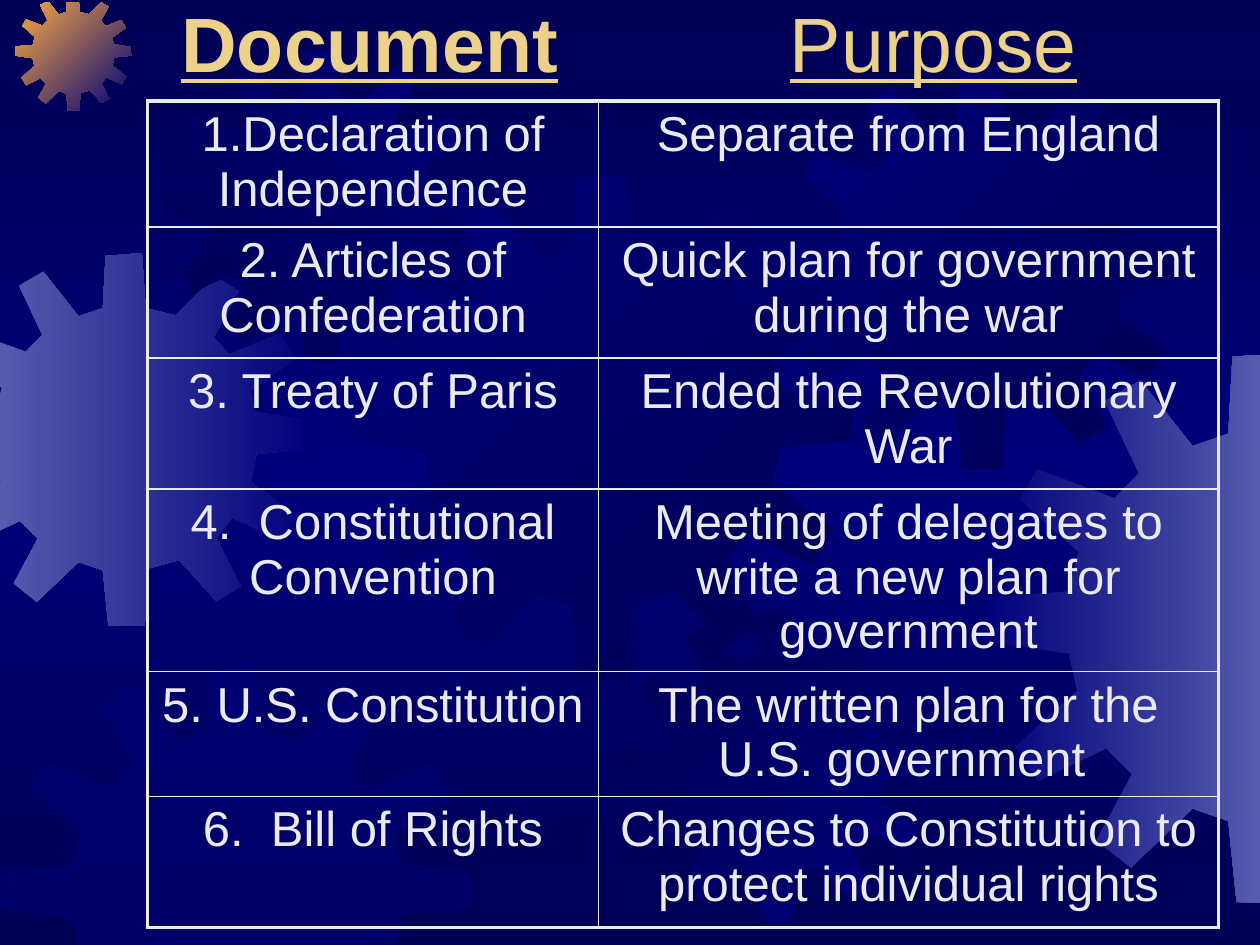
from copy import deepcopy

from lxml import etree
from pptx import Presentation
from pptx.dml.color import RGBColor
from pptx.enum.text import MSO_ANCHOR, PP_ALIGN
from pptx.oxml.ns import qn
from pptx.util import Inches, Pt

CENTER = PP_ALIGN.CENTER
BOTTOM = MSO_ANCHOR.BOTTOM

NAVY, BLUE, LILAC, ORANGE = "000054", "00007A", "555BAD", "FCAB40"
GOLD, PALE = "EBD189", "EAEAEA"

# Outline of a twelve-toothed gear, drawn at GEAR_SIZE across
GEAR_SIZE = 4.01
GEAR = [
    (2.55, 0.67), (2.23, 0.59), (2.19, 0), (1.8, 0.03), (1.77, 0.59), (1.51, 0.68),
    (1.13, 0.2), (0.87, 0.35), (1.12, 0.88), (0.94, 1.06), (0.38, 0.85), (0.25, 1.07),
    (0.68, 1.45), (0.61, 1.74), (0.01, 1.78), (0, 2.1), (0.61, 2.19), (0.67, 2.46),
    (0.22, 2.87), (0.38, 3.12), (0.88, 2.88), (1.07, 3.07), (0.81, 3.55), (1.06, 3.75),
    (1.51, 3.32), (1.77, 3.41), (1.83, 4), (2.22, 4.01), (2.26, 3.39), (2.59, 3.3),
    (2.99, 3.74), (3.25, 3.58), (2.99, 3.06), (3.16, 2.84), (3.68, 3.09), (3.84, 2.81),
    (3.36, 2.46), (3.42, 2.16), (4.01, 2.1), (4, 1.8), (3.41, 1.71), (3.35, 1.48),
    (3.83, 1.14), (3.67, 0.87), (3.13, 1.09), (2.96, 0.91), (3.23, 0.41), (2.97, 0.25),
]

# left, top, size, colours, clockwise gradient angle
GEARS = [
    (-0.49, 2.01, 2.96, (LILAC, BLUE), 0),
    (0.12, -0.04, 0.92, (ORANGE, BLUE), 45),
    (1.3, 0.39, 2.48, (NAVY, BLUE), 315),
    (2.77, 1.39, 4.01, (BLUE, NAVY), 45),
    (0, 5.25, 3.74, (BLUE,), 0),
    (4.91, 4.84, 2.48, (NAVY, BLUE), 45),
    (6.18, 0.53, 3.2, (BLUE, NAVY), 45),
    (7.82, 2.8, 4.37, (BLUE, LILAC), 0),
]

DOCUMENTS = [
    ("1.Declaration of Independence", "Separate from England"),
    ("2. Articles of Confederation", "Quick plan for government during the war"),
    ("3. Treaty of Paris", "Ended the Revolutionary War"),
    ("4.  Constitutional Convention",
     "Meeting of delegates to write a new plan for government"),
    ("5. U.S. Constitution", "The written plan for the U.S. government "),
    ("6.  Bill of Rights", "Changes to Constitution to protect individual rights"),
]
ROW_HEIGHTS = (1, 1.04, 1.04, 1.45, 0.99, 1.04)


def rgb(value):
    return RGBColor.from_string(value)


def clip(points, axis, limit, sign):
    """Keep the part of a polygon on one side of an upright or level line."""
    kept = []
    for start, end in zip(points[-1:] + points[:-1], points):
        start_inside = sign * (start[axis] - limit) >= 0
        end_inside = sign * (end[axis] - limit) >= 0
        if start_inside != end_inside:
            share = (limit - start[axis]) / (end[axis] - start[axis])
            kept.append(tuple(a + share * (b - a) for a, b in zip(start, end)))
        if end_inside:
            kept.append(end)
    return kept


def add_span(para, text, size=28, color=PALE, font="Arial", bold=False, underline=False):
    span = para.add_run()
    span.text = text
    span.font.name = font
    span.font.size = Pt(size)
    span.font.color.rgb = rgb(color)
    span.font.bold = bold
    span.font.underline = underline


def fill_gradient(fill, owner, colors, angle):
    """Spread the colours evenly along a clockwise angle."""
    fill.gradient()
    stop_list = next(owner.iter(qn("a:gsLst")))
    while len(stop_list) < len(colors):
        stop_list.append(deepcopy(stop_list[-1]))
    for index, (stop, color) in enumerate(zip(fill.gradient_stops, colors)):
        stop.position = index / (len(colors) - 1)
        stop.color.rgb = rgb(color)
    fill.gradient_angle = (360 - angle) % 360


class SlideBuilder:
    def __init__(self, deck):
        self.page = deck.slides.add_slide(deck.slide_layouts[6])

    def background(self, colors, angle):
        fill_gradient(self.page.background.fill, self.page.element, colors, angle)

    def gear(self, left, top, size, colors, angle):
        scale = size / GEAR_SIZE
        points = [(left + x * scale, top + y * scale) for x, y in GEAR]
        for axis, limit, sign in [(0, 0, 1), (0, 10, -1), (1, 0.02, 1), (1, 7.5, -1)]:
            points = clip(points, axis, limit, sign)
        points = [(Inches(x), Inches(y)) for x, y in points]
        builder = self.page.shapes.build_freeform(*points[0])
        builder.add_line_segments(points[1:])
        shape = builder.convert_to_shape()
        shape.shadow.inherit = False
        shape.line.fill.background()
        if len(colors) > 1:
            fill_gradient(shape.fill, shape.element, colors, angle)
        else:
            shape.fill.solid()
            shape.fill.fore_color.rgb = rgb(colors[0])
            color = next(shape.element.spPr.iter(qn("a:srgbClr")))
            etree.SubElement(color, qn("a:alpha"), val="50000")

    def heading(self, first, second):
        box = self.page.shapes.add_textbox(Inches(1.17), 0, Inches(8.5), Inches(0.75))
        frame = box.text_frame
        frame.word_wrap = True
        frame.vertical_anchor = BOTTOM
        frame.margin_left = Inches(0.27)
        para = frame.paragraphs[0]
        tabs = etree.SubElement(para._p.get_or_add_pPr(), qn("a:tabLst"))
        etree.SubElement(tabs, qn("a:tab"), pos=str(Inches(4.83)), algn="l")
        add_span(para, first, size=44, color=GOLD, bold=True, underline=True)
        add_span(para, "\t", size=44, color=GOLD)
        add_span(para, second, size=44, color=GOLD, underline=True)

    def border(self, cell, widths):
        """Draw the left, right, top and bottom edges of a cell."""
        properties = cell._tc.get_or_add_tcPr()
        for index, (side, width) in enumerate(zip("LRTB", widths)):
            line = etree.Element(qn(f"a:ln{side}"), w=str(Pt(width)))
            fill = etree.SubElement(line, qn("a:solidFill"))
            etree.SubElement(fill, qn("a:srgbClr"), val=PALE)
            properties.insert(index, line)

    def table(self, rows, left, top, column_widths, row_heights):
        table = self.page.shapes.add_table(
            len(rows), len(column_widths), Inches(left), Inches(top),
            Inches(sum(column_widths)), Inches(sum(row_heights))).table
        table.first_row = table.horz_banding = False
        for column, width in zip(table.columns, column_widths):
            column.width = Inches(width)
        for row, height in zip(table.rows, row_heights):
            row.height = Inches(height)
        last_row, last_column = len(rows) - 1, len(column_widths) - 1
        for r, texts in enumerate(rows):
            for c, text in enumerate(texts):
                cell = table.cell(r, c)
                cell.fill.background()
                cell.margin_bottom = 0
                outer = (c == 0, c == last_column, r == 0, r == last_row)
                self.border(cell, [2.25 if edge else 1 for edge in outer])
                para = cell.text_frame.paragraphs[0]
                para.alignment = CENTER
                add_span(para, text)


def main():
    deck = Presentation()
    deck.slide_width, deck.slide_height = Inches(10), Inches(7.5)
    builder = SlideBuilder(deck)
    builder.background((NAVY, BLUE, NAVY), 90)
    for gear in GEARS:
        builder.gear(*gear)
    builder.heading("Document", "Purpose")
    builder.table(DOCUMENTS, 1.17, 0.8, (3.58, 4.92), ROW_HEIGHTS)
    deck.save("out.pptx")


if __name__ == "__main__":
    main()
